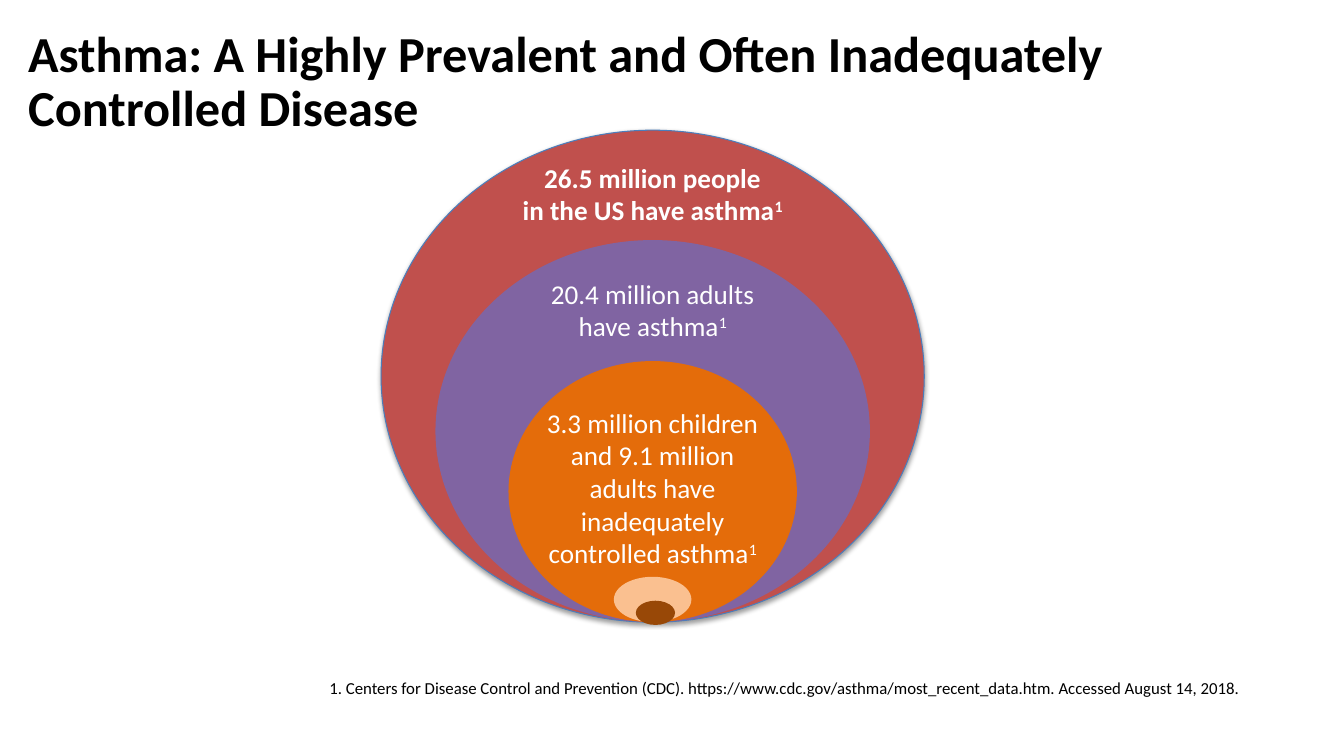
from lxml import etree
from pptx import Presentation
from pptx.dml.color import RGBColor
from pptx.enum.shapes import MSO_SHAPE
from pptx.enum.text import MSO_ANCHOR, PP_ALIGN
from pptx.oxml.ns import qn
from pptx.util import Pt

OVAL = MSO_SHAPE.OVAL
TOP, MIDDLE = MSO_ANCHOR.TOP, MSO_ANCHOR.MIDDLE
LEFT, CENTER = PP_ALIGN.LEFT, PP_ALIGN.CENTER

# Content
TITLE = "Asthma: A Highly Prevalent and Often Inadequately Controlled Disease"
FOOTNOTE = ("1. Centers for Disease Control and Prevention (CDC). "
            "https://www.cdc.gov/asthma/most_recent_data.htm. Accessed August 14, 2018.")
REFERENCE = "1"

# Nested ovals: width, height, fill, shift right, shift down
OVALS = [
    (388, 351.4, "C0504D", 0, 0),
    (310.3, 272.9, "8064A2", 0, 0),
    (206, 186.5, "E46C0A", 0, 0),
    (55.4, 32.4, "FAC090", 0, 0),
    (28, 17.3, "984807", 2, 2),
]
# Labels: lines, top, width, height, bold
LABELS = [
    (["26.5 million people", "in the US have asthma"], 111.6, 269.3, 54, True),
    (["20.4 million adults", "have asthma"], 194.4, 344.2, 54, False),
    (["3.3 million children and 9.1 million adults have inadequately controlled asthma"],
     286.6, 180.7, 124.6, False),
]
CENTER_X, BOTTOM_Y = 466.2, 444.4


def rgb(value):
    return RGBColor.from_string(value)


def style(font, size, color, bold=False):
    for name, value in {"name": "Calibri", "size": Pt(size), "bold": bold}.items():
        setattr(font, name, value)
    font.color.rgb = rgb(color)


def add_text(lines, box, size, color="000000", bold=False, align=LEFT,
             anchor=TOP, spacing=1.0, reference=None):
    tf = slide.shapes.add_textbox(*map(Pt, box)).text_frame
    tf.word_wrap = True
    tf.vertical_anchor = anchor
    p = tf.paragraphs[0]
    p.alignment = align
    p.line_spacing = spacing
    for i, line in enumerate(lines):
        if i:
            p.add_line_break()
        r = p.add_run()
        r.text = line
        style(r.font, size, color, bold)
    if reference:
        r = p.add_run()
        r.text = reference
        style(r.font, size, color, bold)
        r.font._element.set("baseline", "30000")


def add_shadow(sp, color, alpha, blur, distance, angle):
    effects = sp._element.spPr.find(qn("a:effectLst"))
    shadow = etree.SubElement(
        effects, qn("a:outerShdw"), blurRad=str(Pt(blur)), dist=str(Pt(distance)),
        dir=str(angle * 60000), rotWithShape="0")
    clr = etree.SubElement(shadow, qn("a:srgbClr"), val=color)
    etree.SubElement(clr, qn("a:alpha"), val=str(alpha * 1000))


prs = Presentation()
prs.slide_width, prs.slide_height = Pt(960), Pt(540)
slide = prs.slides.add_slide(prs.slide_layouts[6])

# Title and footnote
add_text([TITLE], (13, 17.3, 936, 84.2), 36, bold=True, anchor=MIDDLE, spacing=0.9)
add_text([FOOTNOTE], (228.2, 482.4, 727.2, 48.2), 12, spacing=0.9)

# Ovals share a centre line and a bottom edge
for i, (w, h, fill, dx, dy) in enumerate(OVALS):
    sp = slide.shapes.add_shape(OVAL, Pt(CENTER_X - w / 2 + dx), Pt(BOTTOM_Y - h + dy),
                                Pt(w), Pt(h))
    sp.shadow.inherit = False
    sp.fill.solid()
    sp.fill.fore_color.rgb = rgb(fill)
    if i == 0:
        sp.line.color.rgb = rgb("4B7EBC")
        sp.line.width = Pt(0.75)
        add_shadow(sp, "000000", 38, 3.1, 1.6, 90)
    else:
        sp.line.fill.background()

# Labels on the same centre line
for lines, top, w, h, bold in LABELS:
    add_text(lines, (CENTER_X - w / 2, top, w, h), 19.4, "FFFFFF", bold, CENTER,
             reference=REFERENCE)

prs.save("out.pptx")
